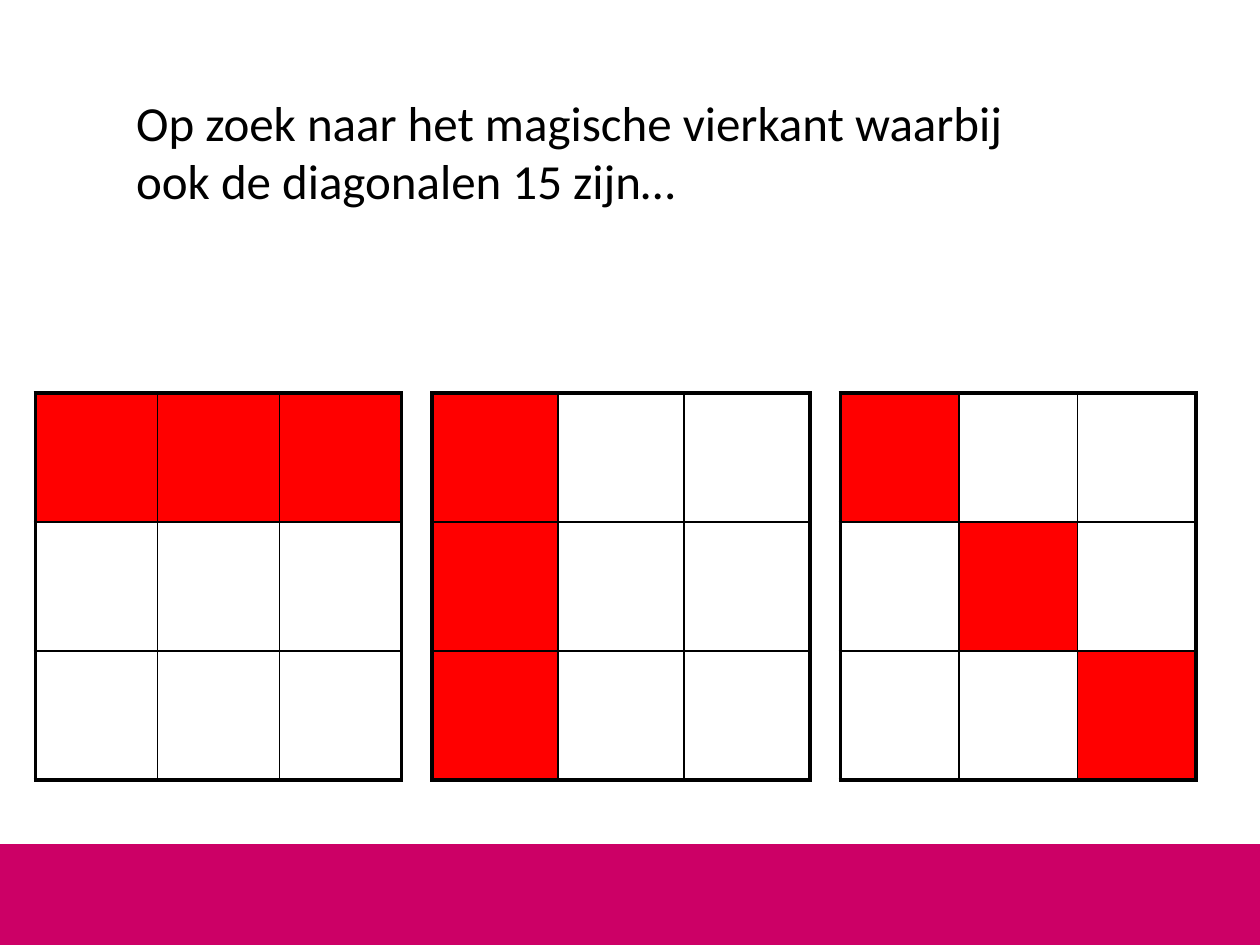
from dataclasses import dataclass

import pptx
import pptx.dml.color
import pptx.enum.shapes
import pptx.enum.text
import pptx.oxml
import pptx.oxml.ns
import pptx.util
from pptx.util import Cm, Pt


@dataclass(frozen=True)
class Theme:
    font: str = "Calibri"
    title_size: float = 28
    text: str = "000000"
    band: str = "CC0066"
    marked: str = "FF0000"
    border: str = "000000"
    outer_line: float = 2.25
    inner_line: float = 1


THEME = Theme()
GRID_SIZE = 3
GRID_TOP = 7.92
CELL_HEIGHT = 2.6


def rgb(value):
    return pptx.dml.color.RGBColor.from_string(value)


def add_band(slide, top, width, height):
    band = slide.shapes.add_shape(
        pptx.enum.shapes.MSO_SHAPE.RECTANGLE, 0, Cm(top), Cm(width), Cm(height))
    band.shadow.inherit = False
    band.fill.solid()
    band.fill.fore_color.rgb = rgb(THEME.band)
    band.line.fill.background()


def format_title(slide, text, left, top, width, height):
    title = slide.shapes.title
    title.left, title.top = Cm(left), Cm(top)
    title.width, title.height = Cm(width), Cm(height)
    frame = title.text_frame
    frame.word_wrap = True
    frame.auto_size = pptx.enum.text.MSO_AUTO_SIZE.NONE
    frame.vertical_anchor = pptx.enum.text.MSO_ANCHOR.TOP
    frame.text = text
    paragraph = frame.paragraphs[0]
    paragraph.alignment = pptx.enum.text.PP_ALIGN.LEFT
    paragraph.font.name = THEME.font
    paragraph.font.size = Pt(THEME.title_size)
    paragraph.font.color.rgb = rgb(THEME.text)


def set_borders(cell, row, column):
    """Draw thick lines on the outside of the grid and thin lines inside."""
    last = GRID_SIZE - 1
    outer_sides = {"lnL": column == 0, "lnR": column == last,
                   "lnT": row == 0, "lnB": row == last}
    properties = cell._tc.get_or_add_tcPr()
    for side, is_outer in outer_sides.items():
        width = Pt(THEME.outer_line if is_outer else THEME.inner_line)
        properties.append(pptx.oxml.parse_xml(
            f'<a:{side} {pptx.oxml.ns.nsdecls("a")} w="{width}"><a:solidFill>'
            f'<a:srgbClr val="{THEME.border}"/></a:solidFill></a:{side}>'))


def add_square(slide, left, cell_width, marked_cells):
    table = slide.shapes.add_table(
        GRID_SIZE, GRID_SIZE, Cm(left), Cm(GRID_TOP),
        Cm(GRID_SIZE * cell_width), Cm(GRID_SIZE * CELL_HEIGHT)).table
    table.first_row = False
    table.horz_banding = False
    for row in range(GRID_SIZE):
        for column in range(GRID_SIZE):
            cell = table.cell(row, column)
            set_borders(cell, row, column)
            if (row, column) in marked_cells:
                cell.fill.solid()
                cell.fill.fore_color.rgb = rgb(THEME.marked)
            else:
                cell.fill.background()


def main():
    presentation = pptx.Presentation()
    presentation.slide_width, presentation.slide_height = Cm(25.4), Cm(19.05)
    slide = presentation.slides.add_slide(presentation.slide_layouts[5])

    # Title and footer band
    add_band(slide, 17.02, 25.4, 2.03)
    format_title(
        slide, "Op zoek naar het magische vierkant waarbij\vook de diagonalen 15 zijn…",
        2.49, 1.73, 21.89, 2.79)

    # Squares marking a row, a column and a diagonal
    steps = range(GRID_SIZE)
    add_square(slide, 0.71, 2.46, {(0, step) for step in steps})
    add_square(slide, 8.71, 2.54, {(step, 0) for step in steps})
    add_square(slide, 16.94, 2.39, {(step, step) for step in steps})

    presentation.save("out.pptx")


if __name__ == "__main__":
    main()
